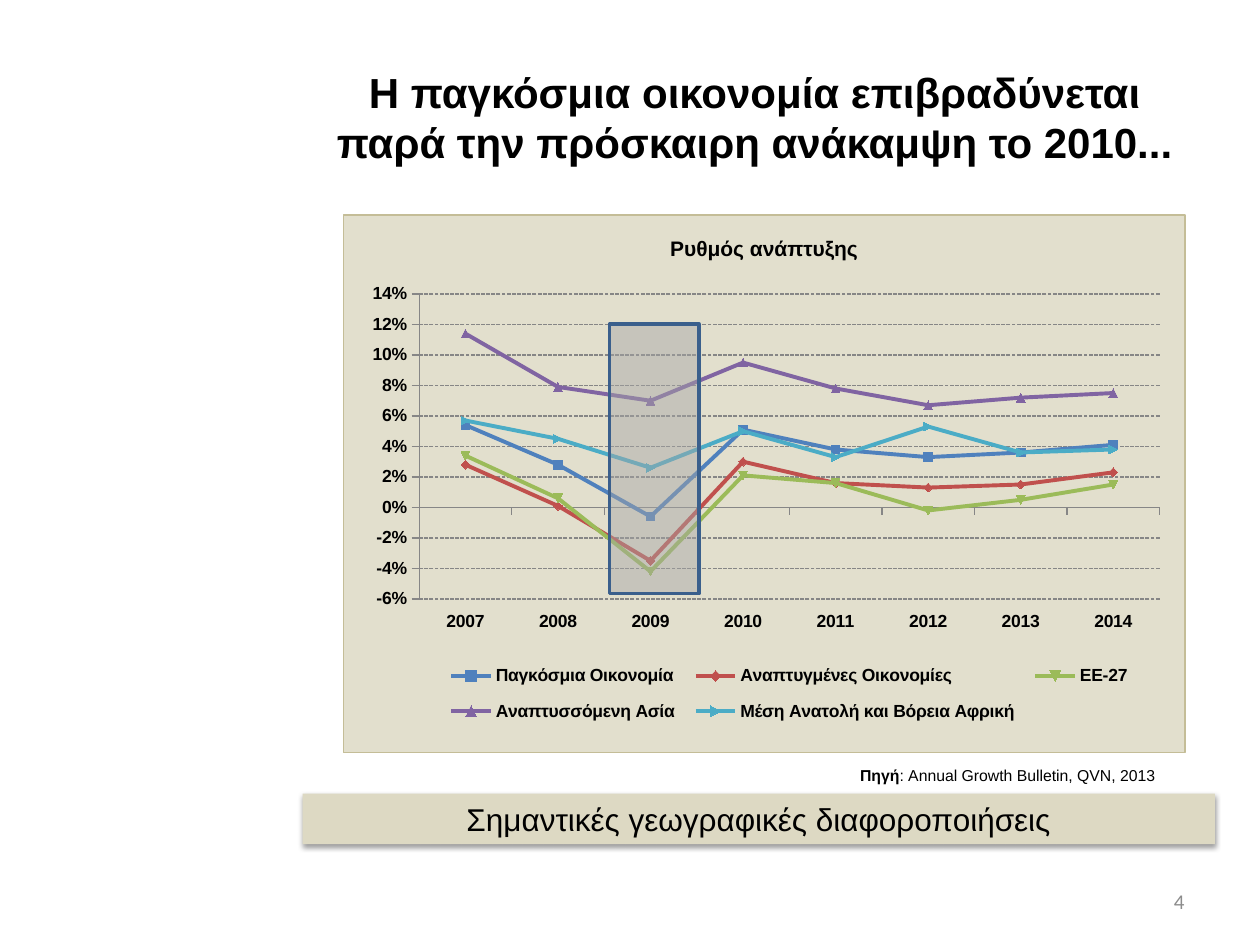
from dataclasses import dataclass

from lxml.etree import SubElement
from pptx import Presentation
from pptx.chart.data import CategoryChartData
from pptx.dml.color import RGBColor
from pptx.enum.chart import XL_CHART_TYPE as ChartType, XL_LEGEND_POSITION as LegendPos
from pptx.enum.chart import XL_TICK_LABEL_POSITION as LabelPos, XL_TICK_MARK as Tick
from pptx.enum.dml import MSO_LINE_DASH_STYLE as Dash
from pptx.enum.shapes import MSO_SHAPE as Shape
from pptx.enum.text import MSO_ANCHOR as Anchor, PP_ALIGN as Align
from pptx.oxml import parse_xml
from pptx.oxml.ns import nsdecls, qn
from pptx.util import Cm, Pt


@dataclass(frozen=True)
class Box:
    left: float
    top: float
    width: float
    height: float

    def lengths(self) -> tuple:
        return Cm(self.left), Cm(self.top), Cm(self.width), Cm(self.height)


@dataclass(frozen=True)
class Series:
    name: str
    color: str
    values: tuple


@dataclass(frozen=True)
class Run:
    text: str
    size: float
    bold: bool = False
    color: str = "000000"
    font: str = "Arial"


YEARS = [str(year) for year in range(2007, 2015)]
SERIES = [
    Series("Παγκόσμια Οικονομία", "4F81BD",
           (0.054, 0.028, -0.006, 0.051, 0.038, 0.033, 0.036, 0.041)),
    Series("Αναπτυγμένες Οικονομίες", "C0504D",
           (0.028, 0.001, -0.035, 0.03, 0.016, 0.013, 0.015, 0.023)),
    Series("ΕΕ-27", "9BBB59",
           (0.034, 0.006, -0.042, 0.021, 0.016, -0.002, 0.005, 0.015)),
    Series("Αναπτυσσόμενη Ασία", "8064A2",
           (0.114, 0.079, 0.07, 0.095, 0.078, 0.067, 0.072, 0.075)),
    Series("Μέση Ανατολή και Βόρεια Αφρική", "4BACC6",
           (0.057, 0.045, 0.026, 0.05, 0.033, 0.053, 0.036, 0.038)),
]
GREY = "868686"


def rgb(color: str) -> RGBColor:
    return RGBColor.from_string(color)


def write(tf, runs: list[Run], align=Align.LEFT, anchor=Anchor.TOP) -> None:
    tf.word_wrap = True
    tf.vertical_anchor = anchor
    p = tf.paragraphs[0]
    p.alignment = align
    for item in runs:
        r = p.add_run()
        r.text = item.text
        r.font.size = Pt(item.size)
        r.font.bold = item.bold
        r.font.name = item.font
        r.font.color.rgb = rgb(item.color)


def add_text(slide, box: Box, runs: list[Run], **layout) -> None:
    write(slide.shapes.add_textbox(*box.lengths()).text_frame, runs, **layout)


def add_rect(slide, box: Box, fill: str):
    s = slide.shapes.add_shape(Shape.RECTANGLE, *box.lengths())
    s.shadow.inherit = False
    s.fill.solid()
    s.fill.fore_color.rgb = rgb(fill)
    s.line.fill.background()
    return s


def set_layout(element, x: float, y: float, w: float, h: float, inner=False) -> None:
    """Place a plot area or legend by fractions of the chart's size."""
    for old in element.findall(qn("c:layout")):
        element.remove(old)
    target = '<c:layoutTarget val="inner"/>' if inner else ""
    layout = parse_xml(
        f'<c:layout {nsdecls("c")}><c:manualLayout>{target}'
        '<c:xMode val="edge"/><c:yMode val="edge"/>'
        f'<c:x val="{x}"/><c:y val="{y}"/><c:w val="{w}"/><c:h val="{h}"/>'
        '</c:manualLayout></c:layout>')
    if inner:
        element.insert(0, layout)
    else:
        element.find(qn("c:legendPos")).addnext(layout)


def style_line(line, color: str, width: float) -> None:
    line.color.rgb = rgb(color)
    line.width = Pt(width)


def add_growth_chart(slide, box: Box) -> None:
    data = CategoryChartData(number_format="0%")
    data.categories = YEARS
    for item in SERIES:
        data.add_series(item.name, item.values)
    chart = slide.shapes.add_chart(ChartType.LINE_MARKERS, *box.lengths(), data).chart

    chart.font.size = Pt(10)
    chart.font.bold = True
    chart.font.name = "Arial"
    chart.font.color.rgb = rgb("000000")
    chart.has_title = True
    write(chart.chart_title.text_frame, [Run("Ρυθμός ανάπτυξης", 12, True)], Align.CENTER)
    chart.chart_title.include_in_layout = False

    plot = chart.plots[0]
    plot.vary_by_categories = False
    for line, item in zip(plot.series, SERIES):
        line.smooth = False
        style_line(line.format.line, item.color, 2.25)

    for axis in (chart.category_axis, chart.value_axis):
        axis.major_tick_mark = Tick.OUTSIDE
        axis.minor_tick_mark = Tick.NONE
        style_line(axis.format.line, GREY, 0.75)
    chart.category_axis.tick_label_position = LabelPos.LOW
    values = chart.value_axis
    values.minimum_scale, values.maximum_scale, values.major_unit = -0.06, 0.14, 0.02
    values.tick_labels.number_format = "0%"
    values.tick_labels.number_format_is_linked = False
    grid = values.major_gridlines.format.line
    style_line(grid, GREY, 0.75)
    grid.dash_style = Dash.SQUARE_DOT

    chart.has_legend = True
    chart.legend.position = LegendPos.BOTTOM
    chart.legend.include_in_layout = False
    space = chart.element
    set_layout(space.find(".//" + qn("c:legend")), 0.11, 0.81, 0.84, 0.16)
    set_layout(space.find(".//" + qn("c:plotArea")), 0.09, 0.147, 0.88, 0.567, inner=True)
    space.find(qn("c:txPr")).addprevious(parse_xml(
        f'<c:spPr {nsdecls("c", "a")}><a:solidFill><a:srgbClr val="DDD9C3">'
        '<a:alpha val="83000"/></a:srgbClr></a:solidFill><a:ln w="9525"><a:solidFill>'
        '<a:srgbClr val="C4BD97"/></a:solidFill></a:ln></c:spPr>'))


def add_highlight(slide, box: Box) -> None:
    s = add_rect(slide, box, "A6A6A6")
    style_line(s.line, "3A5F8C", 2)
    color = s.fill._xPr.find(".//" + qn("a:srgbClr"))
    SubElement(color, qn("a:alpha"), val="46000")


def add_banner(slide, box: Box, text: str) -> None:
    s = add_rect(slide, box, "DDD9C3")
    effects = s._element.spPr.find(qn("a:effectLst"))
    shadow = SubElement(effects, qn("a:outerShdw"), blurRad=str(Pt(3.1)),
                        dist=str(Pt(1.6)), dir="5400000", rotWithShape="0")
    color = SubElement(shadow, qn("a:srgbClr"), val="000000")
    SubElement(color, qn("a:alpha"), val="38000")
    write(s.text_frame, [Run(text, 18)], Align.CENTER)


def main() -> None:
    prs = Presentation()
    prs.slide_width, prs.slide_height = Cm(25.4), Cm(19.05)
    slide = prs.slides.add_slide(prs.slide_layouts[5])

    title = slide.shapes.title
    title.left, title.top, title.width, title.height = Box(6.3, 0.76, 17.83, 3.18).lengths()
    title.fill.solid()
    title.fill.fore_color.rgb = rgb("FFFFFF")
    heading = "Η παγκόσμια οικονομία επιβραδύνεται παρά την πρόσκαιρη ανάκαμψη το 2010..."
    write(title.text_frame, [Run(heading, 24, True)], Align.CENTER, Anchor.MIDDLE)

    add_growth_chart(slide, Box(6.91, 4.32, 16.99, 10.87))
    add_highlight(slide, Box(12.29, 6.53, 1.8, 5.44))
    add_text(slide, Box(17.09, 15.32, 7.21, 0.64),
             [Run("Πηγή", 9, True), Run(": Annual Growth Bulletin, QVN, 2013", 9)])
    add_text(slide, Box(18.21, 17.65, 5.92, 1.02),
             [Run("4", 12, color="8C8C8C", font="Calibri")],
             align=Align.RIGHT, anchor=Anchor.MIDDLE)
    add_banner(slide, Box(6.1, 16, 18.39, 1.02), "Σημαντικές γεωγραφικές διαφοροποιήσεις")
    prs.save("out.pptx")


if __name__ == "__main__":
    main()
